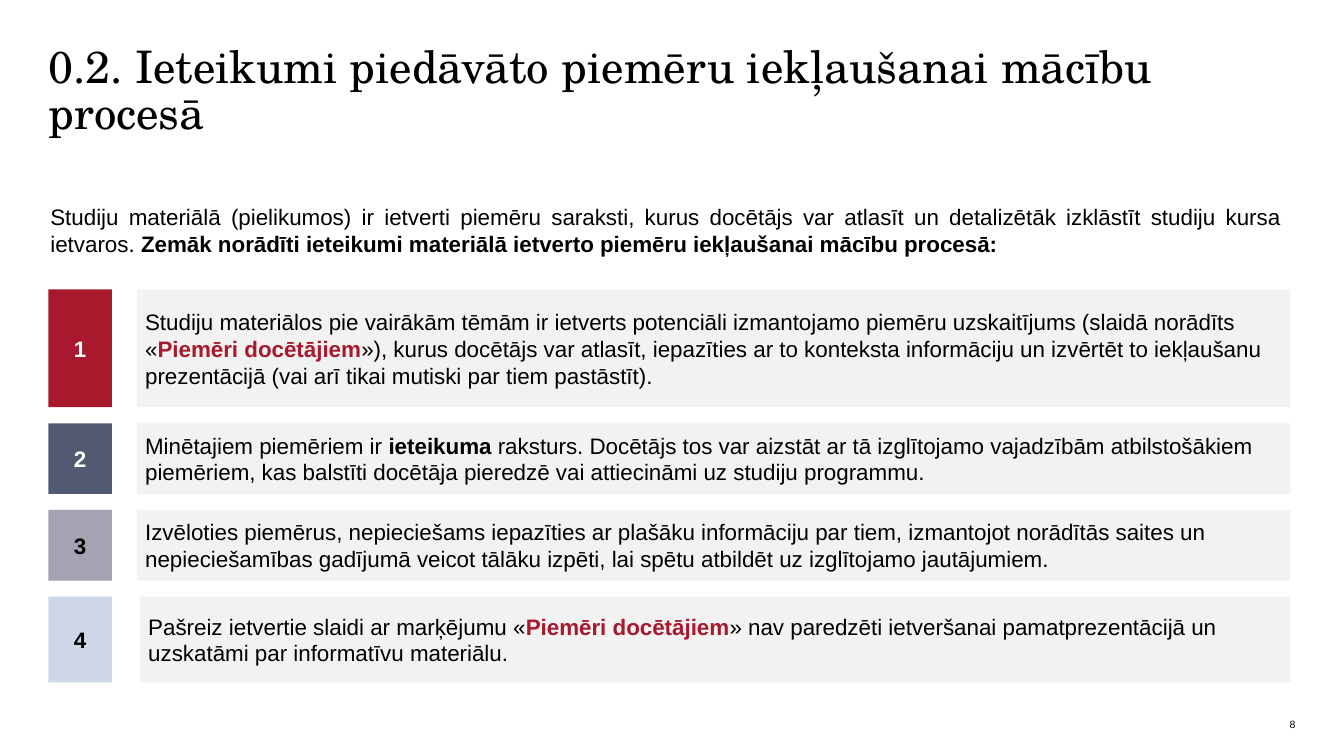
import dataclasses

import pptx
import pptx.dml.color
import pptx.enum.shapes
import pptx.enum.text
import pptx.util

Inches = pptx.util.Inches
Align = pptx.enum.text.PP_ALIGN
Anchor = pptx.enum.text.MSO_ANCHOR


@dataclasses.dataclass(frozen=True)
class Theme:
    title_font: str = "TeX Gyre Schola"
    body_font: str = "Arial"
    title_size: float = 32
    body_size: float = 16
    number_size: float = 7.5
    black: str = "000000"
    white: str = "FFFFFF"
    panel: str = "F2F2F2"
    red: str = "A8192D"
    slate: str = "525A72"
    grey: str = "A4A3B2"
    pale: str = "CFD6E8"


def rgb(value):
    return pptx.dml.color.RGBColor.from_string(value)


class SlideBuilder:
    def __init__(self, slide, theme):
        self.slide = slide
        self.theme = theme

    def add_text(self, frame, runs, size, font=None, align=Align.LEFT, anchor=Anchor.TOP, inset=0):
        frame.word_wrap = True
        frame.auto_size = pptx.enum.text.MSO_AUTO_SIZE.NONE
        frame.vertical_anchor = anchor
        frame.margin_left = frame.margin_right = Inches(inset)
        frame.margin_top = frame.margin_bottom = Inches(inset)
        para = frame.paragraphs[0]
        para.alignment = align
        for text, color, bold in runs:
            span = para.add_run()
            span.text = text
            span.font.name = font or self.theme.body_font
            span.font.size = pptx.util.Pt(size)
            span.font.bold = bold
            span.font.color.rgb = rgb(color)
        return para

    def title(self, text, left, top, width, height):
        box = self.slide.shapes.title
        box.left, box.top = Inches(left), Inches(top)
        box.width, box.height = Inches(width), Inches(height)
        para = self.add_text(box.text_frame, [(text, self.theme.black, False)],
                             self.theme.title_size, self.theme.title_font)
        para.line_spacing = 0.85

    def panel(self, runs, fill, left, top, width, height, align=Align.LEFT, anchor=Anchor.MIDDLE):
        box = self.slide.shapes.add_shape(
            pptx.enum.shapes.MSO_SHAPE.RECTANGLE,
            Inches(left), Inches(top), Inches(width), Inches(height))
        box.shadow.inherit = False
        box.fill.solid()
        box.fill.fore_color.rgb = rgb(fill)
        box.line.fill.background()
        return self.add_text(box.text_frame, runs, self.theme.body_size,
                             align=align, anchor=anchor, inset=0.08)

    def page_number(self, text, left, top, width, height):
        box = self.slide.shapes.add_textbox(
            Inches(left), Inches(top), Inches(width), Inches(height))
        self.add_text(box.text_frame, [(text, self.theme.black, False)],
                      self.theme.number_size, align=Align.RIGHT, anchor=Anchor.BOTTOM)


def main():
    theme = Theme()
    deck = pptx.Presentation()
    deck.slide_width, deck.slide_height = Inches(13.33), Inches(7.5)
    page = SlideBuilder(deck.slides.add_slide(deck.slide_layouts[5]), theme)

    def plain(text):
        return text, theme.black, False

    def strong(text):
        return text, theme.black, True

    marker = ("Piemēri docētājiem", theme.red, True)

    page.title("0.2. Ieteikumi piedāvāto piemēru iekļaušanai mācību procesā",
               0.48, 0.47, 12.37, 1.52)
    intro = page.panel([
        plain("Studiju materiālā (pielikumos) ir ietverti piemēru saraksti, kurus docētājs "
              "var atlasīt un detalizētāk izklāstīt studiju kursa ietvaros. "),
        strong("Zemāk norādīti ieteikumi materiālā ietverto piemēru iekļaušanai mācību procesā:"),
    ], theme.white, 0.42, 1.94, 12.37, 4.36, Align.JUSTIFY, Anchor.TOP)
    intro.space_after = pptx.util.Pt(6)

    recommendations = [
        (theme.red, theme.white, 1.36, 1.17, [
            plain("Studiju materiālos pie vairākām tēmām ir ietverts potenciāli izmantojamo "
                  "piemēru uzskaitījums (slaidā norādīts «"),
            marker,
            plain("»), kurus docētājs var atlasīt, iepazīties ar to konteksta informāciju un "
                  "izvērtēt to iekļaušanu prezentācijā (vai arī tikai mutiski par tiem pastāstīt)."),
        ]),
        (theme.slate, theme.white, 1.36, 0.7, [
            plain("Minētajiem piemēriem ir "),
            strong("ieteikuma"),
            plain(" raksturs. Docētājs tos var aizstāt ar tā izglītojamo vajadzībām "
                  "atbilstošākiem piemēriem, kas balstīti docētāja pieredzē vai attiecināmi "
                  "uz studiju programmu."),
        ]),
        (theme.grey, theme.black, 1.36, 0.7, [
            plain("Izvēloties piemērus, nepieciešams iepazīties ar plašāku informāciju par "
                  "tiem, izmantojot norādītās saites un nepieciešamības gadījumā veicot tālāku "
                  "izpēti, lai spētu atbildēt uz izglītojamo jautājumiem."),
        ]),
        (theme.pale, theme.black, 1.39, 0.85, [
            plain("Pašreiz ietvertie slaidi ar marķējumu «"),
            marker,
            plain("» nav paredzēti ietveršanai pamatprezentācijā un uzskatāmi par "
                  "informatīvu materiālu."),
        ]),
    ]
    top, gap, right = 2.87, 0.16, 12.8
    for number, (fill, color, left, height, runs) in enumerate(recommendations, 1):
        page.panel([(str(number), color, True)], fill, 0.48, top, 0.63, height, Align.CENTER)
        page.panel(runs, theme.panel, left, top, right - left, height)
        top += height + gap

    page.page_number("8", 10.92, 7.1, 1.93, 0.15)
    deck.save("out.pptx")


if __name__ == "__main__":
    main()
